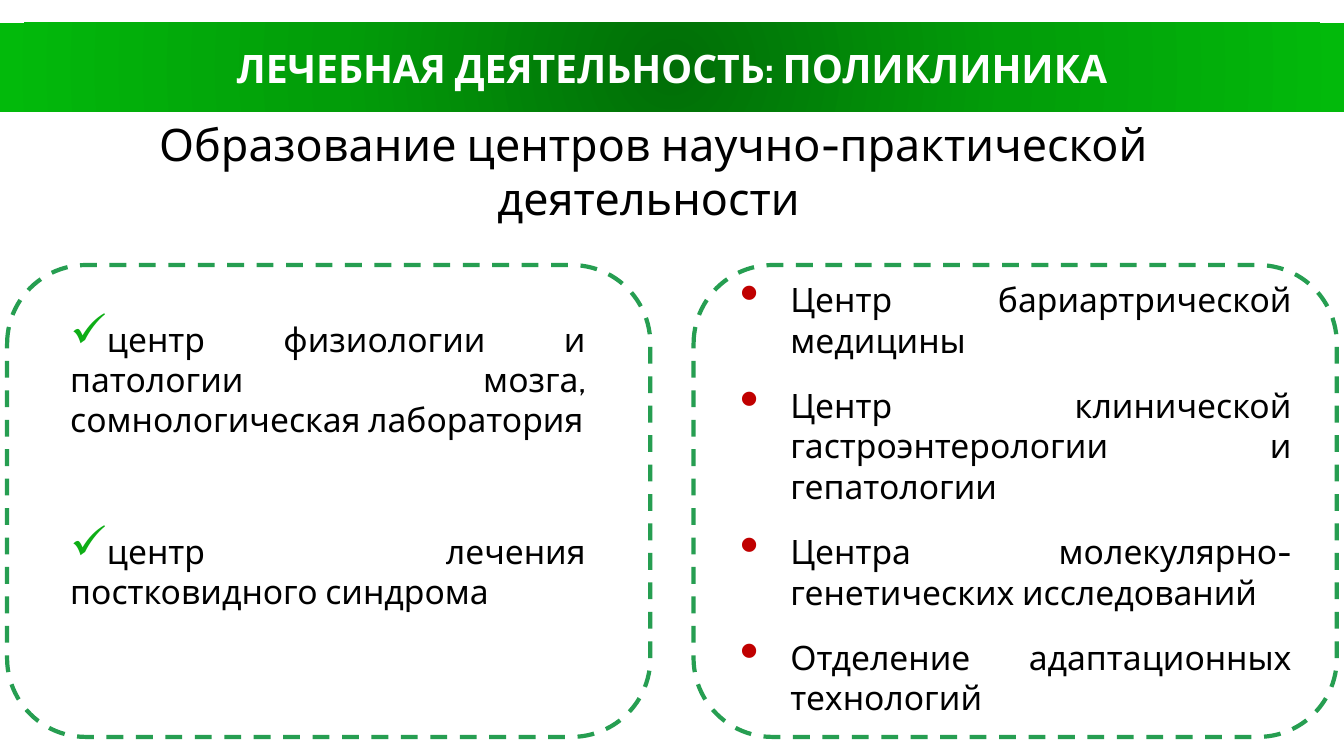
from lxml import etree
from pptx import Presentation
from pptx.dml.color import RGBColor
from pptx.enum.dml import MSO_LINE
from pptx.enum.shapes import MSO_SHAPE
from pptx.enum.text import MSO_ANCHOR, PP_ALIGN
from pptx.oxml import parse_xml
from pptx.oxml.ns import qn
from pptx.util import Cm, Pt

RECTANGLE, ROUNDED = MSO_SHAPE.RECTANGLE, MSO_SHAPE.ROUNDED_RECTANGLE
CENTER, JUSTIFY = PP_ALIGN.CENTER, PP_ALIGN.JUSTIFY
TOP, MIDDLE = MSO_ANCHOR.TOP, MSO_ANCHOR.MIDDLE
DASH = MSO_LINE.DASH

HEADING = "ЛЕЧЕБНАЯ ДЕЯТЕЛЬНОСТЬ: ПОЛИКЛИНИКА"
SUBHEADING = "Образование центров научно-практической деятельности "
COLUMNS = [
    {
        "items": [
            "центр физиологии и патологии мозга, сомнологическая лаборатория",
            "центр лечения постковидного синдрома",
        ],
        "bullet": ("✓", "0EAE16", 139), "indent": 0, "gap": 65,
        "inset": (1.34, 1.22), "size": (13.49, 7.7),
    },
    {
        "items": [
            "Центр бариартрической медицины",
            "Центр клинической гастроэнтерологии и гепатологии",
            "Центра молекулярно-генетических исследований",
            "Отделение адаптационных технологий",
        ],
        "bullet": ("•", "C00000", 162), "indent": 1.27, "gap": 18,
        "inset": (0.92, 0.23), "size": (14.4, 11.4),
    },
]
THEME = {
    "font": "Cabin", "heading": 28, "subheading": 32, "body": 24,
    "light": "FFFFFF", "dark": "000000", "frame": "269E51", "frame_width": 3,
    "banner": [(0, "016E07"), (50, "029D09"), (100, "02BA0B")],
}
SLIDE_W, SLIDE_H = 33.87, 19.05
BANNER_TOP, BANNER_H = 0.58, 2.24
FRAME_LEFT, FRAME_TOP, FRAME_W, FRAME_H = 0.18, 6.68, 16.21, 11.89
FRAME_STEP = SLIDE_W - 2 * FRAME_LEFT - FRAME_W + 0.0


def add_text(paragraph, text, size, color, align, bold=False):
    paragraph.alignment = align
    run = paragraph.add_run()
    run.text = text
    run.font.name = THEME["font"]
    run.font.size = Pt(size)
    run.font.bold = bold
    run.font.color.rgb = RGBColor.from_string(color)


def add_frame_text(slide, left, top, width, height):
    frame = slide.shapes.add_textbox(Cm(left), Cm(top), Cm(width), Cm(height)).text_frame
    frame.word_wrap = True
    frame.vertical_anchor = TOP
    return frame


def set_bullet(paragraph, bullet, indent):
    mark, color, percent = bullet
    properties = paragraph._p.get_or_add_pPr()
    properties.set("marL", str(Cm(indent)))
    properties.set("indent", str(-Cm(indent)))
    bullet_color = etree.SubElement(properties, qn("a:buClr"))
    etree.SubElement(bullet_color, qn("a:srgbClr"), val=color)
    etree.SubElement(properties, qn("a:buSzPct"), val=str(percent * 1000))
    etree.SubElement(properties, qn("a:buChar"), char=mark)


def fill_radial(shape, stops):
    marks = "".join(
        f'<a:gs pos="{position * 1000}"><a:srgbClr val="{color}"/></a:gs>'
        for position, color in stops
    )
    gradient = parse_xml(
        '<a:gradFill xmlns:a="http://schemas.openxmlformats.org/drawingml/2006/main">'
        f'<a:gsLst>{marks}</a:gsLst><a:path path="circle">'
        '<a:fillToRect l="50000" t="50000" r="50000" b="50000"/></a:path></a:gradFill>'
    )
    shape._element.spPr.find(qn("a:prstGeom")).addnext(gradient)


def add_banner(slide):
    banner = slide.shapes.add_shape(
        RECTANGLE, 0, Cm(BANNER_TOP), Cm(SLIDE_W), Cm(BANNER_H))
    banner.shadow.inherit = False
    banner.line.fill.background()
    fill_radial(banner, THEME["banner"])
    banner.text_frame.vertical_anchor = MIDDLE
    add_text(banner.text_frame.paragraphs[0], HEADING, THEME["heading"],
             THEME["light"], CENTER, bold=True)


def add_column(slide, left, column):
    dx, dy = column["inset"]
    body = add_frame_text(slide, left + dx, FRAME_TOP + dy, *column["size"])
    for index, item in enumerate(column["items"]):
        paragraph = body.add_paragraph() if index else body.paragraphs[0]
        set_bullet(paragraph, column["bullet"], column["indent"])
        paragraph.space_after = Pt(column["gap"])
        add_text(paragraph, item, THEME["body"], THEME["dark"], JUSTIFY)

    outline = slide.shapes.add_shape(
        ROUNDED, Cm(left), Cm(FRAME_TOP), Cm(FRAME_W), Cm(FRAME_H))
    outline.shadow.inherit = False
    outline.fill.background()
    outline.line.color.rgb = RGBColor.from_string(THEME["frame"])
    outline.line.width = Pt(THEME["frame_width"])
    outline.line.dash_style = DASH


def main():
    deck = Presentation()
    deck.slide_width, deck.slide_height = Cm(SLIDE_W), Cm(SLIDE_H)
    slide = deck.slides.add_slide(deck.slide_layouts[6])
    add_banner(slide)
    subheading = add_frame_text(slide, 0.56, BANNER_TOP + BANNER_H, 31.83, 1.63)
    add_text(subheading.paragraphs[0], SUBHEADING, THEME["subheading"],
             THEME["dark"], CENTER)
    for index, column in enumerate(COLUMNS):
        add_column(slide, FRAME_LEFT + index * FRAME_STEP, column)
    deck.save("out.pptx")


if __name__ == "__main__":
    main()
